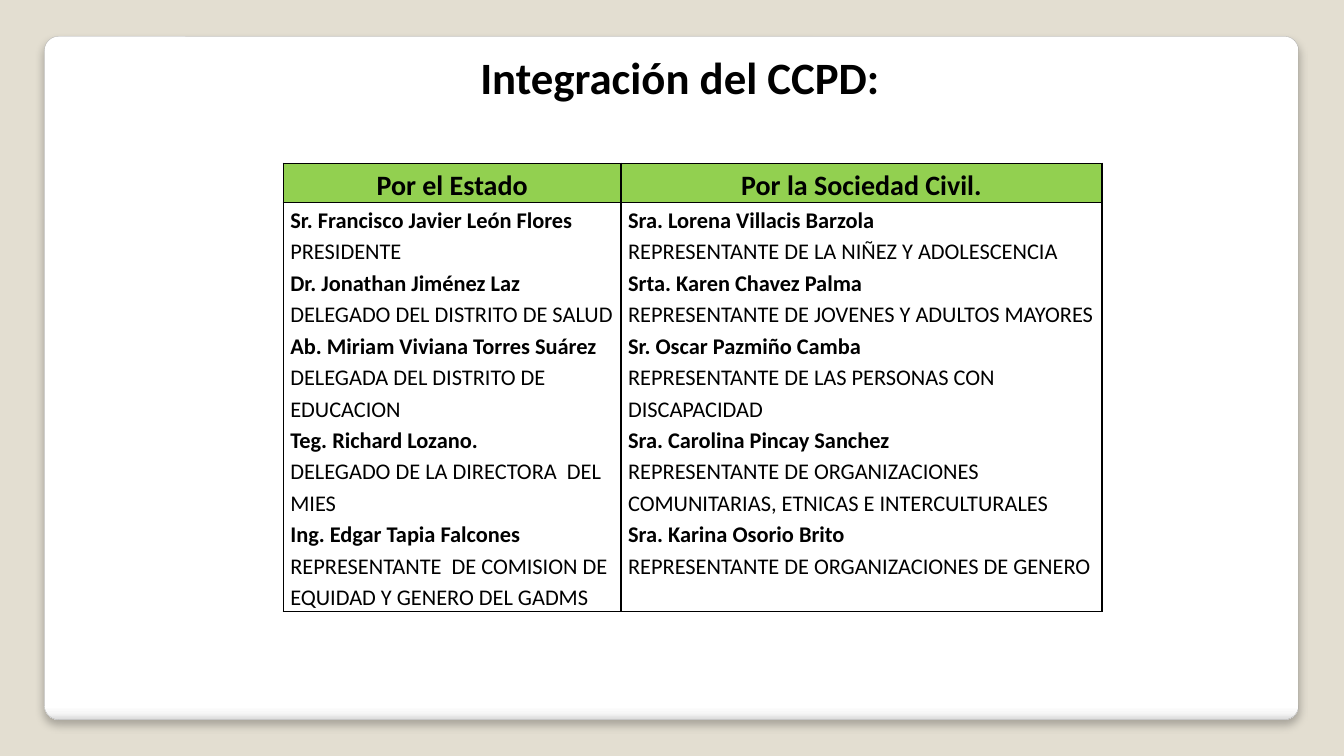
from lxml.etree import SubElement
from pptx import Presentation
from pptx.dml.color import RGBColor
from pptx.enum.shapes import MSO_SHAPE
from pptx.enum.text import MSO_ANCHOR, PP_ALIGN
from pptx.oxml import parse_xml
from pptx.oxml.ns import nsdecls, qn
from pptx.util import Inches, Pt

SAND = RGBColor(0xE3, 0xDE, 0xD1)
GREY = RGBColor(0xA4, 0xA4, 0xA4)
GREEN = RGBColor(0x92, 0xD0, 0x50)
BLACK = RGBColor(0, 0, 0)
STOPS = [(0, "FFFFFF"), (98, "FFFFFF"), (99, "F7F7F7"), (100, "DADADA")]
FONT = "Calibri"

HEADS = ["Por el Estado", "Por la Sociedad Civil."]
STATE = [
    ("Sr. Francisco Javier León Flores", "PRESIDENTE"),
    ("Dr. Jonathan Jiménez Laz", "DELEGADO DEL DISTRITO DE SALUD"),
    ("Ab. Miriam Viviana Torres Suárez", "DELEGADA DEL DISTRITO DE EDUCACION"),
    ("Teg. Richard Lozano.", "DELEGADO DE LA DIRECTORA  DEL MIES"),
    ("Ing. Edgar Tapia Falcones",
     "REPRESENTANTE  DE COMISION DE EQUIDAD Y GENERO DEL GADMS"),
]
CIVIL = [
    ("Sra. Lorena Villacis Barzola", "REPRESENTANTE DE LA NIÑEZ Y ADOLESCENCIA"),
    ("Srta. Karen Chavez Palma", "REPRESENTANTE DE JOVENES Y ADULTOS MAYORES"),
    ("Sr. Oscar Pazmiño Camba", "REPRESENTANTE DE LAS PERSONAS CON DISCAPACIDAD"),
    ("Sra. Carolina Pincay Sanchez",
     "REPRESENTANTE DE ORGANIZACIONES COMUNITARIAS, ETNICAS E INTERCULTURALES"),
    ("Sra. Karina Osorio Brito", "REPRESENTANTE DE ORGANIZACIONES DE GENERO"),
]


def add_run(para, text, size, bold):
    run = para.add_run()
    run.text = text
    run.font.name = FONT
    run.font.size = Pt(size)
    run.font.bold = bold
    run.font.color.rgb = BLACK


def add_title(slide, text):
    title = slide.shapes.title
    title.left, title.top = Inches(2.1), Inches(0.44)
    title.width, title.height = Inches(9.29), Inches(0.64)
    title.text_frame.vertical_anchor = MSO_ANCHOR.MIDDLE
    para = title.text_frame.paragraphs[0]
    para.alignment = PP_ALIGN.CENTER
    add_run(para, text, 32, True)


def add_panel(slide):
    panel = slide.shapes.add_shape(
        MSO_SHAPE.ROUNDED_RECTANGLE,
        Inches(0.44), Inches(0.36), Inches(12.44), Inches(6.78))
    panel.adjustments[0] = 0.021
    panel.line.color.rgb = GREY
    panel.line.width = Pt(0.16)
    panel.fill.gradient()
    panel.fill.gradient_angle = 270
    props = panel.element.spPr
    stops = props.find(qn("a:gradFill")).find(qn("a:gsLst"))
    for stop in list(stops):
        stops.remove(stop)
    for place, tint in STOPS:
        stop = SubElement(stops, qn("a:gs"), pos=str(place * 1000))
        SubElement(stop, qn("a:srgbClr"), val=tint)
    panel.shadow.inherit = False
    props.find(qn("a:effectLst")).append(parse_xml(
        f'<a:outerShdw {nsdecls("a")} blurRad="{Pt(6)}" dist="{Pt(4)}" '
        'dir="5400000" algn="t" rotWithShape="0"><a:srgbClr val="000000">'
        '<a:alpha val="25000"/></a:srgbClr></a:outerShdw>'))
    slide.shapes.title.element.addprevious(panel.element)


def set_edges(cell):
    props = cell._tc.get_or_add_tcPr()
    for spot, side in enumerate("LRTB"):
        props.insert(spot, parse_xml(
            f'<a:ln{side} {nsdecls("a")} w="{Pt(1)}"><a:solidFill>'
            f'<a:srgbClr val="{BLACK}"/></a:solidFill></a:ln{side}>'))


def fill_cell(cell, lines, size, align):
    cell.margin_left = cell.margin_right = Inches(0.07)
    cell.margin_top = cell.margin_bottom = 0
    frame = cell.text_frame
    for spot, (text, bold) in enumerate(lines):
        para = frame.add_paragraph() if spot else frame.paragraphs[0]
        para.alignment = align
        para.line_spacing = 1.15
        add_run(para, text, size, bold)
    set_edges(cell)


def add_members(slide):
    table = slide.shapes.add_table(
        2, 2, Inches(2.81), Inches(1.62), Inches(8.12), Inches(4.23)).table
    table.horz_banding = False
    table.columns[0].width, table.columns[1].width = Inches(3.35), Inches(4.77)
    table.rows[0].height, table.rows[1].height = Inches(0.32), Inches(3.91)
    for col, (head, people) in enumerate(zip(HEADS, [STATE, CIVIL])):
        top, body = table.cell(0, col), table.cell(1, col)
        top.fill.solid()
        top.fill.fore_color.rgb = GREEN
        body.fill.background()
        fill_cell(top, [(head, True)], 20, PP_ALIGN.CENTER)
        lines = [line for name, role in people
                 for line in ((name, True), (role, False))]
        fill_cell(body, lines, 16, PP_ALIGN.LEFT)


def main():
    """Build the slide listing the members of the council."""
    deck = Presentation()
    deck.slide_width, deck.slide_height = Inches(13.33), Inches(7.5)
    slide = deck.slides.add_slide(deck.slide_layouts[5])
    slide.background.fill.solid()
    slide.background.fill.fore_color.rgb = SAND
    add_title(slide, "Integración del CCPD:")
    add_panel(slide)
    add_members(slide)
    deck.save("out.pptx")


if __name__ == "__main__":
    main()
